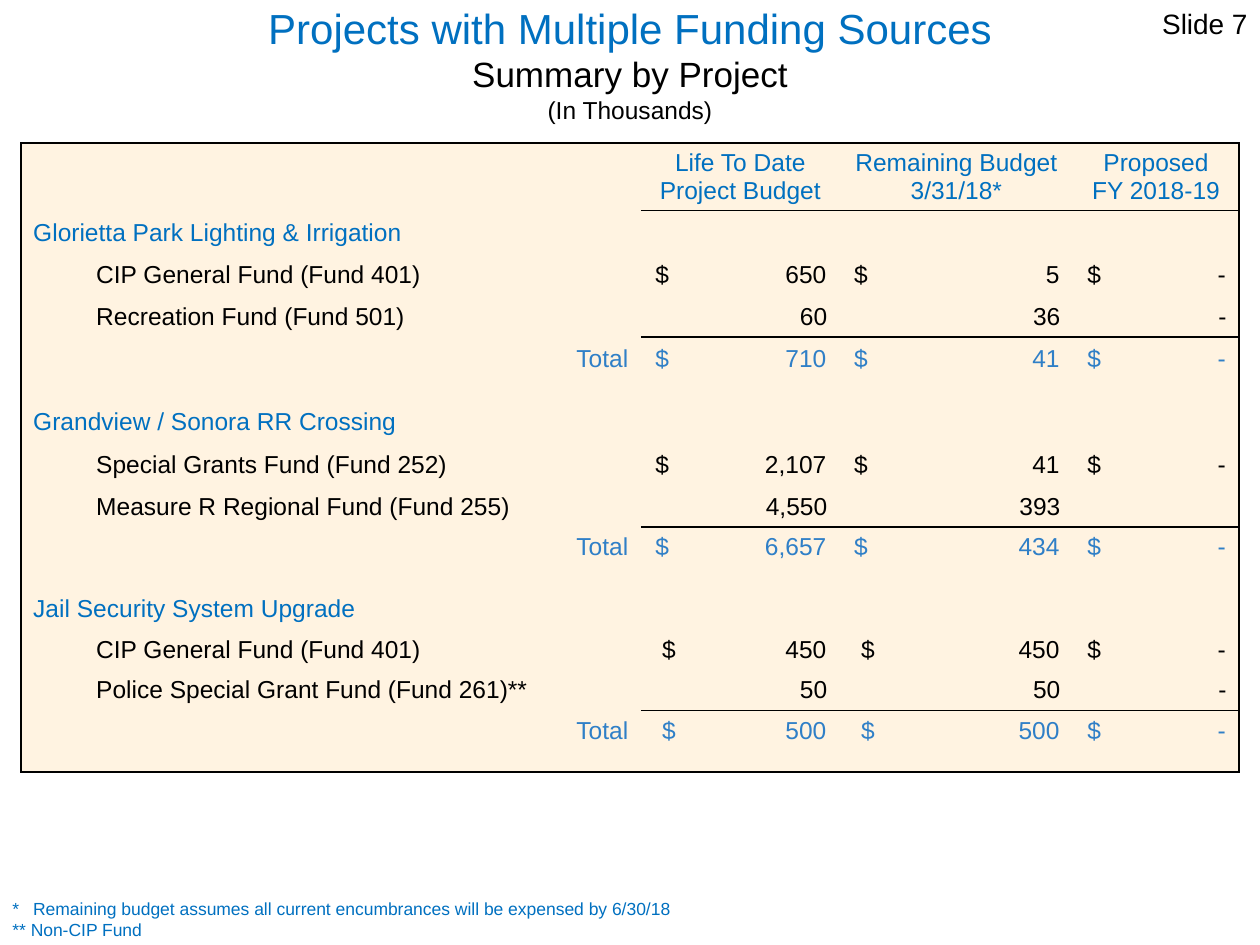
from dataclasses import dataclass
from typing import Optional

from lxml.etree import SubElement
from pptx import Presentation
from pptx.dml.color import RGBColor
from pptx.enum.text import MSO_ANCHOR as Anchor, MSO_AUTO_SIZE as AutoSize, PP_ALIGN as Align
from pptx.oxml import parse_xml
from pptx.oxml.ns import nsdecls, qn
from pptx.util import Cm, Pt

BLUE = RGBColor(0x00, 0x70, 0xC0)
TOTAL_BLUE = RGBColor(0x2F, 0x7F, 0xC7)
BLACK = RGBColor(0x00, 0x00, 0x00)
CREAM = RGBColor(0xFF, 0xF3, 0xE1)
FONT = "Arial"
NO_STYLE = "{2D5ABB26-0587-4C30-8999-92F81FD0307C}"

COLUMNS = (12.5, 4.01, 4.7, 3.35)
HEADINGS = (("Life To Date", "Project Budget"), ("Remaining Budget", "3/31/18*"),
            ("Proposed", "FY 2018-19"))
INSET, ITEM_INDENT = 0.25, 1.27
HEADER_HEIGHT = 1.34


@dataclass(frozen=True)
class Fund:
    name: str
    amounts: tuple


@dataclass(frozen=True)
class Project:
    name: str
    funds: tuple
    totals: tuple
    title_height: float = 0.85
    total_height: float = 0.85
    gap: float = 0.42
    dollar_shift: float = 0.0


PROJECTS = (
    Project("Glorietta Park Lighting & Irrigation",
            (Fund("CIP General Fund (Fund 401)", ("650", "5", "-")),
             Fund("Recreation Fund (Fund 501)", ("60", "36", "-"))),
            ("710", "41", "-")),
    Project("Grandview / Sonora RR Crossing",
            (Fund("Special Grants Fund (Fund 252)", ("2,107", "41", "-")),
             Fund("Measure R Regional Fund (Fund 255)", ("4,550", "393", ""))),
            ("6,657", "434", "-"), total_height=0.82, gap=0.41),
    Project("Jail Security System Upgrade",
            (Fund("CIP General Fund (Fund 401)", ("450", "450", "-")),
             Fund("Police Special Grant Fund (Fund 261)**", ("50", "50", "-"))),
            ("500", "500", "-"), title_height=0.82, total_height=0.82,
            dollar_shift=0.14),
)


@dataclass(frozen=True)
class Row:
    height: float
    label: str = ""
    amounts: tuple = ("", "", "")
    color: RGBColor = BLACK
    label_align: Align = Align.LEFT
    indent: float = 0.0
    dollars: bool = False
    dollar_shift: float = 0.0
    ruled: bool = False


def project_rows(project: Project) -> list[Row]:
    rows = [Row(project.title_height, project.name, color=BLUE)]
    for index, fund in enumerate(project.funds):
        rows.append(Row(project.title_height, fund.name, fund.amounts, indent=ITEM_INDENT,
                        dollars=index == 0, dollar_shift=project.dollar_shift,
                        ruled=index == len(project.funds) - 1))
    rows.append(Row(project.total_height, "Total", project.totals, TOTAL_BLUE, Align.RIGHT,
                    dollars=True, dollar_shift=project.dollar_shift))
    rows.append(Row(project.gap))
    return rows


def add_run(paragraph, text: str, size: float, color: RGBColor) -> None:
    run = paragraph.add_run()
    run.text = text
    run.font.name = FONT
    run.font.size = Pt(size)
    run.font.color.rgb = color


def add_tab_stop(paragraph, position: float, align: str) -> None:
    tabs = SubElement(paragraph._p.get_or_add_pPr(), qn("a:tabLst"))
    SubElement(tabs, qn("a:tab"), pos=str(Cm(position)), algn=align)


def add_lines(paragraph, lines: tuple) -> None:
    """Add (text, size, color) runs with a line break between them."""
    for index, line in enumerate(lines):
        if index:
            paragraph.add_line_break()
        add_run(paragraph, *line)


def style_cell(cell, sides: str) -> None:
    """Fill the cell and rule the given sides, named by L, R, T and B."""
    cell.fill.solid()
    cell.fill.fore_color.rgb = CREAM
    cell.vertical_anchor = Anchor.BOTTOM
    properties = cell._tc.get_or_add_tcPr()
    for index, side in enumerate(s for s in "LRTB" if s in sides):
        properties.insert(index, parse_xml(
            f'<a:ln{side} {nsdecls("a")} w="{Pt(1)}"><a:solidFill>'
            f'<a:srgbClr val="{BLACK}"/></a:solidFill></a:ln{side}>'))


def write_label(cell, row: Row) -> None:
    cell.margin_left = Cm(INSET + row.indent)
    paragraph = cell.text_frame.paragraphs[0]
    paragraph.alignment = row.label_align
    add_run(paragraph, row.label, 14, row.color)


def write_amount(cell, amount: str, row: Row, width: float, shift: float) -> None:
    paragraph = cell.text_frame.paragraphs[0]
    if not row.dollars:
        paragraph.alignment = Align.RIGHT
        add_run(paragraph, amount, 14, row.color)
        return
    left = INSET + 0.04 + shift
    cell.margin_left = Cm(left)
    paragraph.alignment = Align.LEFT
    add_tab_stop(paragraph, width - left - INSET - 0.02, "r")
    add_run(paragraph, f"$\t{amount}", 14, row.color)


def add_budget_table(slide) -> None:
    rows = [row for project in PROJECTS for row in project_rows(project)]
    heights = [HEADER_HEIGHT] + [row.height for row in rows]
    table = slide.shapes.add_table(len(heights), len(COLUMNS), Cm(0.42), Cm(2.88),
                                   Cm(sum(COLUMNS)), Cm(sum(heights))).table
    table.first_row = table.horz_banding = False
    table._tbl.tblPr.find(qn("a:tableStyleId")).text = NO_STYLE
    for column, width in zip(table.columns, COLUMNS):
        column.width = Cm(width)
    for table_row, height in zip(table.rows, heights):
        table_row.height = Cm(height)

    last_row, last_column = len(heights) - 1, len(COLUMNS) - 1
    ruled = {0} | {index for index, row in enumerate(rows, 1) if row.ruled}
    for r in range(len(heights)):
        for c in range(len(COLUMNS)):
            sides = "L" * (c == 0) + "R" * (c == last_column) + "T" * (r == 0)
            sides += "B" * (r == last_row or (r in ruled and c > 0))
            style_cell(table.cell(r, c), sides)

    for c, heading in enumerate(HEADINGS, 1):
        paragraph = table.cell(0, c).text_frame.paragraphs[0]
        paragraph.alignment = Align.CENTER
        add_lines(paragraph, tuple((line, 14, BLUE) for line in heading))
    for r, row in enumerate(rows, 1):
        if row.label:
            write_label(table.cell(r, 0), row)
        for c, amount in enumerate(row.amounts, 1):
            if amount:
                shift = row.dollar_shift if c < last_column else 0
                write_amount(table.cell(r, c), amount, row, COLUMNS[c], shift)
        for cell in table.rows[r].cells:
            if not cell.text:
                SubElement(cell.text_frame.paragraphs[0]._p, qn("a:endParaRPr"), sz="400")


def add_text_frame(slide, left: float, top: float, width: float, height: float):
    frame = slide.shapes.add_textbox(Cm(left), Cm(top), Cm(width), Cm(height)).text_frame
    frame.word_wrap = True
    return frame


def main() -> None:
    deck = Presentation()
    deck.slide_width, deck.slide_height = Cm(25.4), Cm(19.05)
    slide = deck.slides.add_slide(deck.slide_layouts[5])

    title = slide.shapes.title
    title.left, title.top, title.width, title.height = Cm(0.85), Cm(0.42), Cm(23.7), Cm(1.7)
    title.text_frame.auto_size = AutoSize.NONE
    title.text_frame.vertical_anchor = Anchor.MIDDLE
    heading = title.text_frame.paragraphs[0]
    heading.alignment = Align.CENTER
    add_lines(heading, (("Projects with Multiple Funding Sources", 24, BLUE),
                        ("Summary by Project", 20, BLACK), ("(In Thousands)", 14, BLACK)))

    add_budget_table(slide)

    footnotes = add_text_frame(slide, 0, 17.98, 14.17, 1.07)
    encumbrance_note = footnotes.paragraphs[0]
    add_tab_stop(encumbrance_note, 0.42, "l")
    add_run(encumbrance_note, "*\tRemaining budget assumes all current encumbrances "
            "will be expensed by 6/30/18", 10, BLUE)
    add_run(footnotes.add_paragraph(), "** Non-CIP Fund", 10, BLUE)

    slide_label = add_text_frame(slide, 19.48, 0, 5.92, 1.27).paragraphs[0]
    slide_label.alignment = Align.RIGHT
    add_run(slide_label, "Slide 7", 16, BLACK)

    deck.save("out.pptx")


if __name__ == "__main__":
    main()
